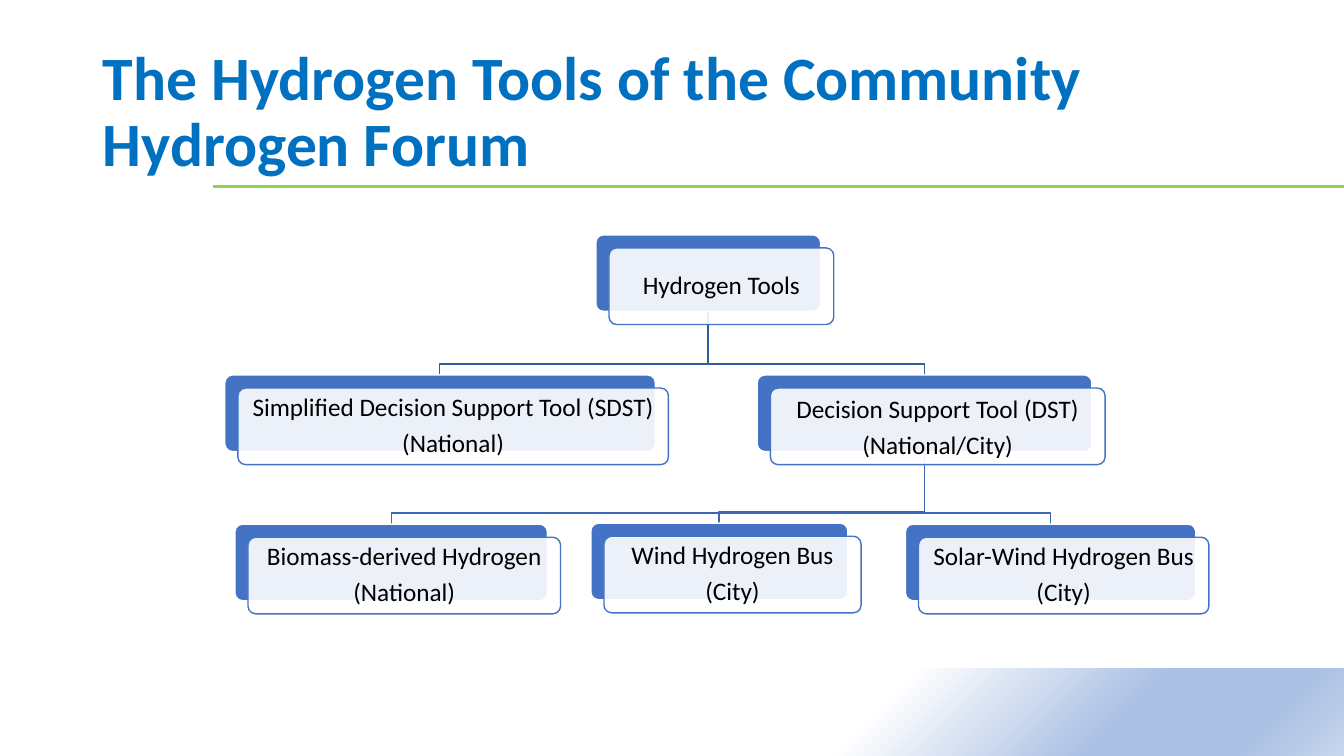
from dataclasses import dataclass

from lxml.etree import SubElement
from pptx import Presentation
from pptx.dml.color import RGBColor
from pptx.enum.shapes import MSO_CONNECTOR, MSO_SHAPE
from pptx.enum.text import MSO_ANCHOR, MSO_AUTO_SIZE, PP_ALIGN
from pptx.oxml.ns import qn
from pptx.shapes.autoshape import Shape
from pptx.slide import Slide
from pptx.util import Emu, Pt

EMU_PER_PX = 9144
BOX_HEIGHT = 76
FRONT_OFFSET = 13
BUS_RISE = 11
TEXT_INSET = 7


@dataclass(frozen=True)
class Theme:
    font: str = "Calibri"
    title_size: int = 44
    box_size: int = 18
    paragraph_gap: float = 6.3
    line_spacing: float = 0.9
    outline: int = 1
    rule_width: float = 2.25
    title: str = "0070C0"
    rule: str = "92D050"
    box: str = "4472C4"
    white: str = "FFFFFF"
    text: str = "000000"
    upper_link: str = "365B9D"
    lower_link: str = "3E67B2"
    front_opacity: int = 90
    footer_stops: tuple[tuple[int, str], ...] = (
        (64, "FFFFFF"), (82, "ABC0E4"), (92, "ABC0E4"), (100, "C7D5ED"),
    )


@dataclass(frozen=True)
class Box:
    left: int
    top: int
    width: int
    lines: tuple[str, ...]
    first_line_spacing: float = 0.9

    @property
    def middle(self) -> int:
        return self.left + self.width // 2


@dataclass(frozen=True)
class Link:
    parent: Box
    child: Box
    color: str


THEME = Theme()
ROOT = Box(591, 233, 223, ("Hydrogen Tools",))
SIMPLIFIED = Box(223, 372, 427, ("Simplified Decision Support Tool (SDST)", "(National)"))
DECISION = Box(751, 372, 332, ("Decision Support Tool (DST)", "(National/City)"), 1.0)
BIOMASS = Box(233, 520, 310, ("Biomass-derived Hydrogen", "(National)"))
WIND = Box(586, 519, 255, ("Wind Hydrogen Bus", "(City)"))
SOLAR_WIND = Box(898, 520, 288, ("Solar-Wind Hydrogen Bus", "(City)"))
BOXES = (ROOT, DECISION, BIOMASS, WIND, SOLAR_WIND, SIMPLIFIED)
LINKS = (
    *(Link(DECISION, child, THEME.lower_link) for child in (SOLAR_WIND, WIND, BIOMASS)),
    *(Link(ROOT, child, THEME.upper_link) for child in (SIMPLIFIED, DECISION)),
)


def px(length: int) -> Emu:
    return Emu(length * EMU_PER_PX)


def rgb(color: str) -> RGBColor:
    return RGBColor.from_string(color)


def add_footer(slide: Slide) -> None:
    shape = slide.shapes.add_shape(MSO_SHAPE.RECTANGLE, px(-7), px(663), px(1340), px(87))
    shape.shadow.inherit = False
    shape.line.fill.background()
    shape.fill.gradient()
    shape.fill.gradient_angle = 315
    stops = shape.element.spPr.find(qn("a:gradFill")).find(qn("a:gsLst"))
    for stop in list(stops):
        stops.remove(stop)
    for position, color in THEME.footer_stops:
        stop = SubElement(stops, qn("a:gs"), pos=str(position * 1000))
        SubElement(stop, qn("a:srgbClr"), val=color)


def add_rule(slide: Slide) -> None:
    rule = slide.shapes.add_connector(MSO_CONNECTOR.STRAIGHT, px(211), px(185), px(1333), px(185))
    rule.line.color.rgb = rgb(THEME.rule)
    rule.line.width = Pt(THEME.rule_width)
    SubElement(rule.element.spPr, qn("a:effectLst"))


def set_title(slide: Slide, text: str) -> None:
    title = slide.shapes.title
    title.left, title.top, title.width, title.height = px(92), px(40), px(1150), px(145)
    frame = title.text_frame
    frame.text = text
    frame.word_wrap = True
    frame.auto_size = MSO_AUTO_SIZE.NONE
    frame.vertical_anchor = MSO_ANCHOR.MIDDLE
    paragraph = frame.paragraphs[0]
    paragraph.alignment = PP_ALIGN.LEFT
    paragraph.line_spacing = THEME.line_spacing
    paragraph.font.name = THEME.font
    paragraph.font.size = Pt(THEME.title_size)
    paragraph.font.bold = True
    paragraph.font.color.rgb = rgb(THEME.title)


def add_link(slide: Slide, link: Link) -> None:
    bus = link.child.top - BUS_RISE
    builder = slide.shapes.build_freeform(
        link.parent.middle, link.parent.top + BOX_HEIGHT, scale=EMU_PER_PX
    )
    builder.add_line_segments(
        [(link.parent.middle, bus), (link.child.middle, bus), (link.child.middle, link.child.top)],
        close=False,
    )
    shape = builder.convert_to_shape()
    shape.shadow.inherit = False
    shape.fill.background()
    shape.line.color.rgb = rgb(link.color)
    shape.line.width = Pt(THEME.outline)


def add_card(slide: Slide, box: Box, offset: int, fill: str, line: str) -> Shape:
    shape = slide.shapes.add_shape(
        MSO_SHAPE.ROUNDED_RECTANGLE,
        px(box.left + offset), px(box.top + offset), px(box.width), px(BOX_HEIGHT),
    )
    shape.adjustments[0] = 0.1
    shape.shadow.inherit = False
    shape.fill.solid()
    shape.fill.fore_color.rgb = rgb(fill)
    shape.line.color.rgb = rgb(line)
    shape.line.width = Pt(THEME.outline)
    return shape


def add_box(slide: Slide, box: Box) -> None:
    add_card(slide, box, 0, THEME.box, THEME.white)
    front = add_card(slide, box, FRONT_OFFSET, THEME.white, THEME.box)
    color = front.element.spPr.find(qn("a:solidFill")).find(qn("a:srgbClr"))
    SubElement(color, qn("a:alpha"), val=str(THEME.front_opacity * 1000))
    frame = front.text_frame
    frame.word_wrap = True
    frame.vertical_anchor = MSO_ANCHOR.MIDDLE
    frame.margin_left = frame.margin_right = px(TEXT_INSET)
    frame.margin_top = frame.margin_bottom = px(TEXT_INSET)
    frame.text = "\n".join(box.lines)
    for paragraph in frame.paragraphs:
        paragraph.alignment = PP_ALIGN.CENTER
        paragraph.line_spacing = THEME.line_spacing
        paragraph.space_after = Pt(THEME.paragraph_gap)
        paragraph.font.name = THEME.font
        paragraph.font.size = Pt(THEME.box_size)
        paragraph.font.color.rgb = rgb(THEME.text)
    frame.paragraphs[0].line_spacing = box.first_line_spacing


def main() -> None:
    presentation = Presentation()
    presentation.slide_width, presentation.slide_height = px(1333), px(750)
    slide = presentation.slides.add_slide(presentation.slide_layouts[5])
    add_footer(slide)
    add_rule(slide)
    set_title(slide, "The Hydrogen Tools of the Community Hydrogen Forum")
    for link in LINKS:
        add_link(slide, link)
    for box in BOXES:
        add_box(slide, box)
    presentation.save("out.pptx")


if __name__ == "__main__":
    main()
